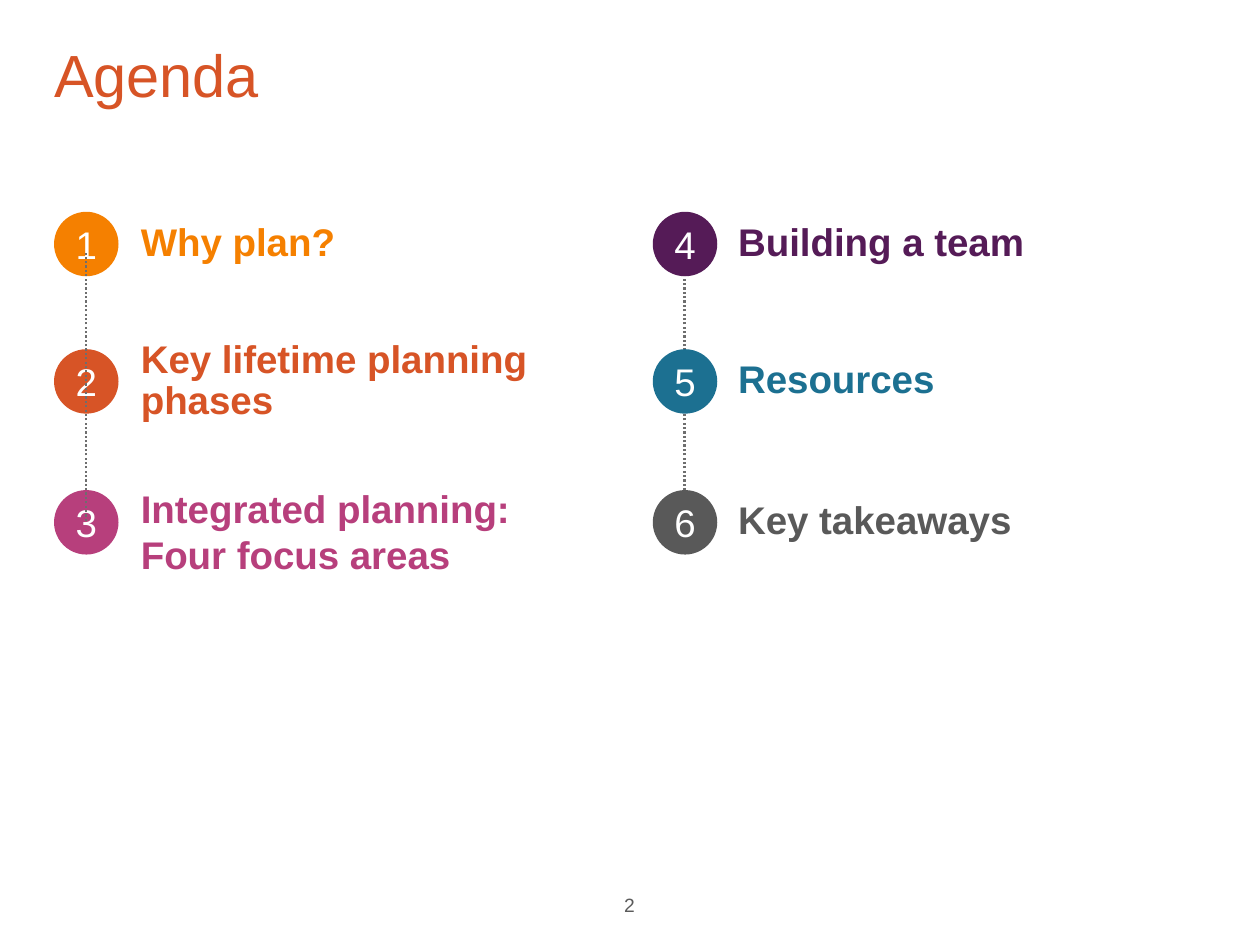
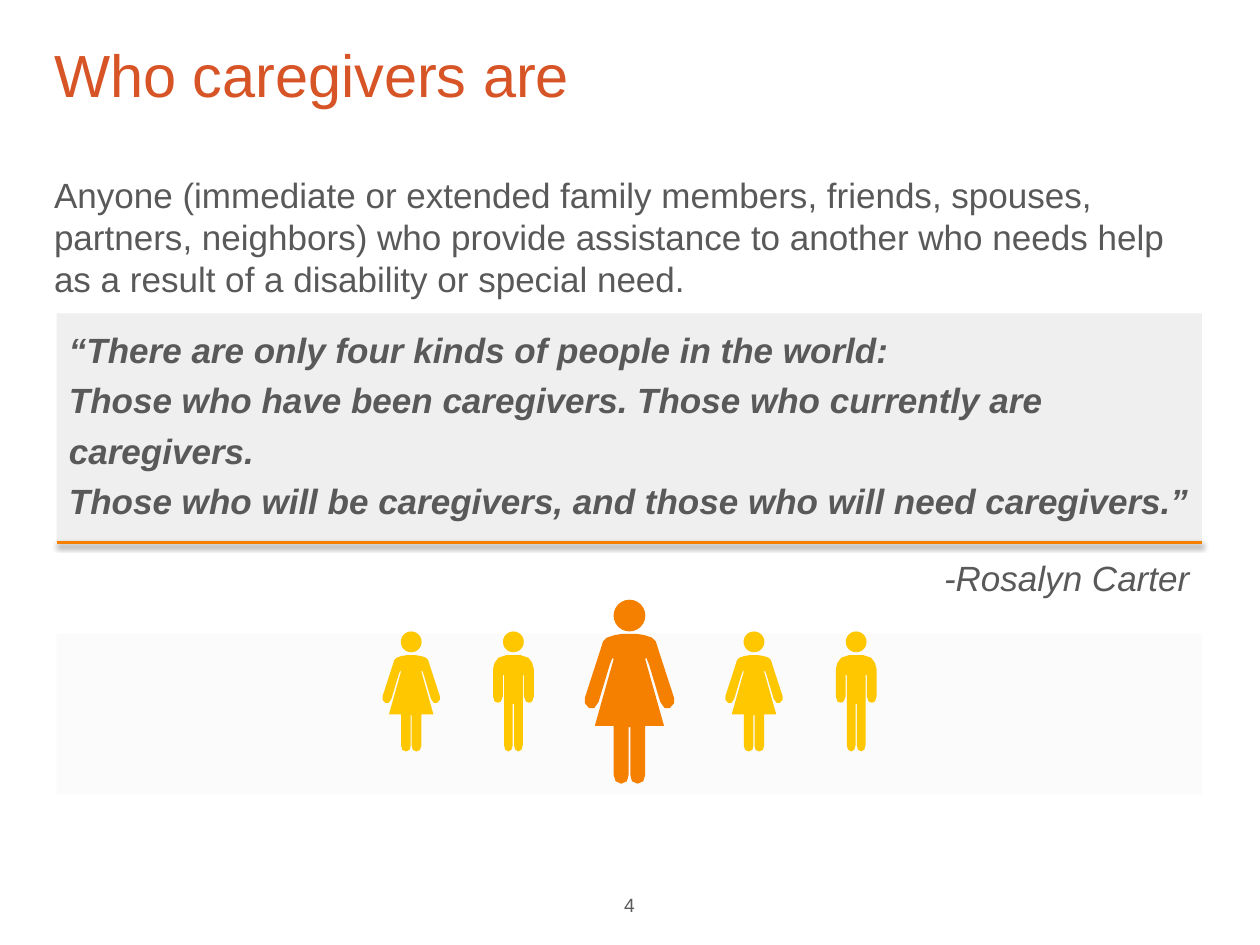
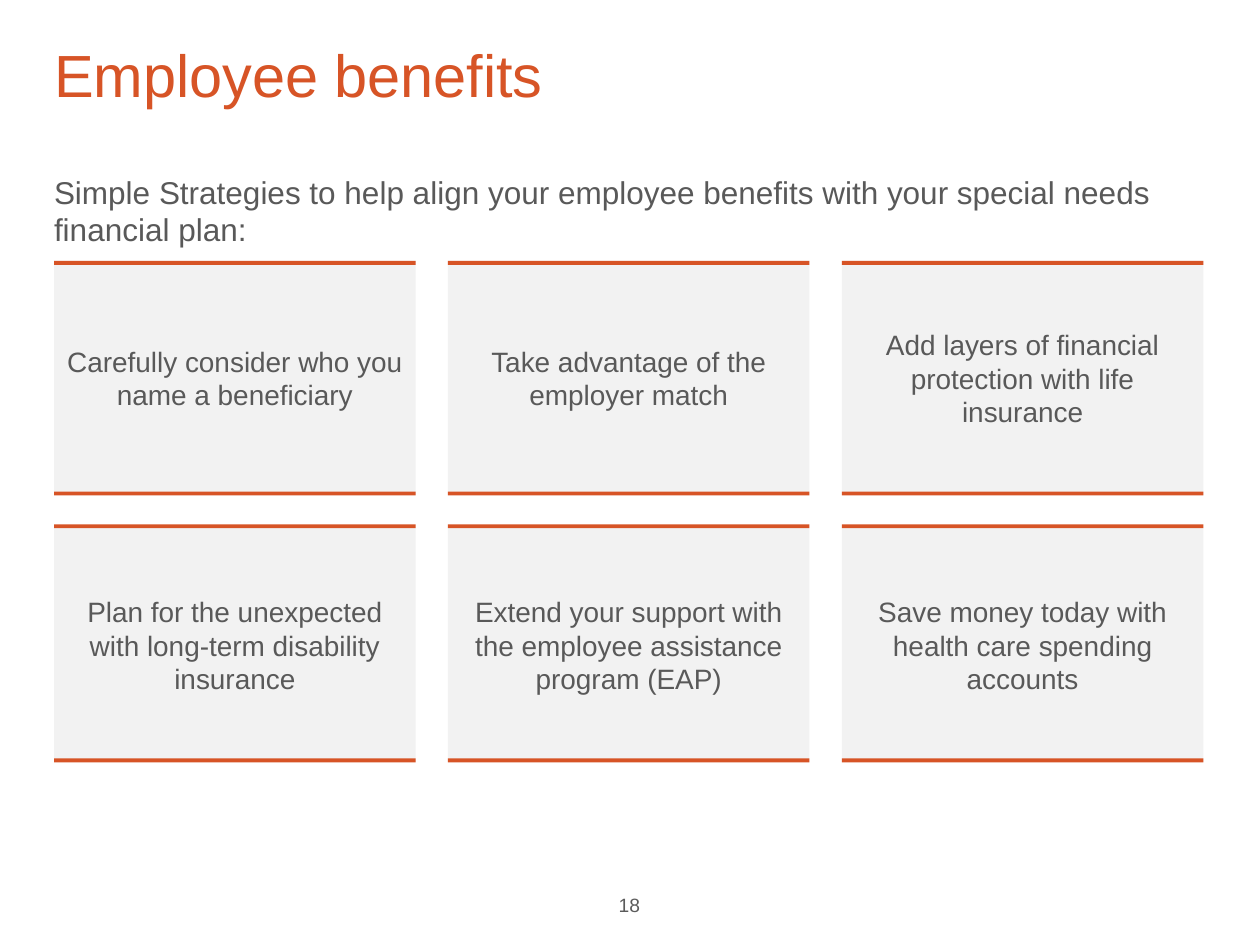
from dataclasses import dataclass
from typing import Optional

from lxml.etree import SubElement
from pptx import Presentation
from pptx.dml.color import RGBColor
from pptx.enum.dml import MSO_LINE
from pptx.enum.shapes import MSO_CONNECTOR, MSO_SHAPE
from pptx.enum.text import MSO_ANCHOR, MSO_AUTO_SIZE, PP_ALIGN
from pptx.oxml.ns import qn
from pptx.shapes.autoshape import Shape
from pptx.shapes.connector import Connector
from pptx.slide import Slide
from pptx.text.text import TextFrame
from pptx.util import Cm, Pt

FONT = "Arial"
RUST = "D75426"
ORANGE = "F58000"
YELLOW = "FFC700"
GRAY = "595959"
MID_GRAY = "6E6E6E"
LIGHT_GRAY = "F2F2F2"
WHITE = "FFFFFF"
LEFT = 1.09
CONTENT_WIDTH = 23.16

Points = list[tuple[float, float]]

WOMAN_HALF: Points = [
    (0, 0), (6, 0), (12, 1), (18, 3), (21, 6), (22.5, 11),
    (35.5, 51), (35.5, 55), (32, 59), (28, 59), (24.5, 54),
    (15.5, 24), (13.5, 19), (12.5, 20), (27.5, 73), (12.5, 73),
    (12.5, 112), (11, 117), (6.5, 119), (2, 117), (0.7, 112), (0.7, 74),
]
MAN_HALF: Points = [
    (0, 0), (6, 0), (12, 2), (15, 6), (16.3, 11), (16.3, 33),
    (15, 37), (12.5, 38), (10, 37), (8.5, 33), (8.5, 16), (7.5, 16),
    (7.5, 72), (6.5, 75.5), (4, 77), (1.5, 75.5), (0.5, 72), (0.5, 39),
]


@dataclass(frozen=True)
class AgendaItem:
    text: str
    color: str
    label_shift: float = 0


@dataclass(frozen=True)
class FigureSize:
    head_top: float
    head: float
    body_top: float
    body_height: float
    color: str


@dataclass(frozen=True)
class Person:
    center: float
    half_outline: Points
    size: FigureSize


@dataclass(frozen=True)
class CardRow:
    top: float
    bar_tops: tuple[float, float]
    texts: tuple[str, str, str]


LARGE = FigureSize(12.09, 0.64, 12.78, 3.02, ORANGE)
SMALL = FigureSize(12.73, 0.42, 13.21, 1.94, YELLOW)

AGENDA_TOPS = (4.27, 7.04, 9.88)
AGENDA_COLUMNS = (
    (1.09, 2.59, (
        AgendaItem("Why plan?", ORANGE),
        AgendaItem("Key lifetime planning phases", RUST),
        AgendaItem("Integrated planning:\vFour focus areas", "B73F7C", 0.17),
    )),
    (13.16, 14.63, (
        AgendaItem("Building a team", "551B57"),
        AgendaItem("Resources", "1C7091"),
        AgendaItem("Key takeaways", GRAY),
    )),
)

PEOPLE = (
    Person(8.29, WOMAN_HALF, SMALL),
    Person(10.35, MAN_HALF, SMALL),
    Person(12.69, WOMAN_HALF, LARGE),
    Person(15.2, WOMAN_HALF, SMALL),
    Person(17.26, MAN_HALF, SMALL),
)

CARD_ROWS = (
    CardRow(5.26, (5.26, 9.91), (
        "Carefully consider who you name a beneficiary",
        "Take advantage of the employer match",
        "Add layers of financial protection with life insurance",
    )),
    CardRow(10.64, (10.57, 15.29), (
        "Plan for the unexpected with long-term disability insurance",
        "Extend your support with the employee assistance program (EAP)",
        "Save money today with health care spending accounts",
    )),
)


def rgb(color: str) -> RGBColor:
    return RGBColor.from_string(color)


def write_text(
    frame: TextFrame,
    text: str,
    *,
    size: float,
    color: str = GRAY,
    bold: bool = False,
    italic: bool = False,
    align: PP_ALIGN = PP_ALIGN.LEFT,
    line_spacing: Optional[float] = None,
    space_before: Optional[float] = None,
    append: bool = False,
) -> None:
    paragraph = frame.add_paragraph() if append else frame.paragraphs[0]
    paragraph.text = text
    paragraph.alignment = align
    if line_spacing is not None:
        paragraph.line_spacing = line_spacing
    if space_before is not None:
        paragraph.space_before = Pt(space_before)
    for run in paragraph.runs:
        run.font.name = FONT
        run.font.size = Pt(size)
        run.font.bold = bold
        run.font.italic = italic
        run.font.color.rgb = rgb(color)


def set_frame(
    frame: TextFrame,
    margins: tuple[float, float, float, float] = (0.25, 0.13, 0.25, 0.13),
    anchor: MSO_ANCHOR = MSO_ANCHOR.TOP,
) -> TextFrame:
    frame.word_wrap = True
    frame.auto_size = MSO_AUTO_SIZE.NONE
    frame.vertical_anchor = anchor
    (frame.margin_left, frame.margin_top,
     frame.margin_right, frame.margin_bottom) = map(Cm, margins)
    return frame


def add_text_box(
    slide: Slide, left: float, top: float, width: float, height: float, **layout
) -> TextFrame:
    box = slide.shapes.add_textbox(Cm(left), Cm(top), Cm(width), Cm(height))
    return set_frame(box.text_frame, **layout)


def paint(shape: Shape, color: str, opacity: Optional[int] = None) -> None:
    shape.shadow.inherit = False
    shape.fill.solid()
    shape.fill.fore_color.rgb = rgb(color)
    shape.line.fill.background()
    if opacity is not None:
        fill_color = shape._element.spPr.find(qn("a:solidFill"))[0]
        SubElement(fill_color, qn("a:alpha"), val=str(opacity * 1000))


def add_block(
    slide: Slide,
    kind: MSO_SHAPE,
    left: float,
    top: float,
    width: float,
    height: float,
    color: str,
    opacity: Optional[int] = None,
) -> Shape:
    shape = slide.shapes.add_shape(kind, Cm(left), Cm(top), Cm(width), Cm(height))
    paint(shape, color, opacity)
    return shape


def add_line(
    slide: Slide,
    start: tuple[float, float],
    end: tuple[float, float],
    color: str,
    width: float,
) -> Connector:
    line = slide.shapes.add_connector(
        MSO_CONNECTOR.STRAIGHT, *map(Cm, start), *map(Cm, end)
    )
    line.line.color.rgb = rgb(color)
    line.line.width = Pt(width)
    SubElement(line._element.spPr, qn("a:effectLst"))
    return line


def add_drop_shadow(line: Connector) -> None:
    effects = line._element.spPr.find(qn("a:effectLst"))
    shadow = SubElement(
        effects, qn("a:outerShdw"),
        blurRad=str(Pt(3.1)), dist=str(Pt(1.6)), dir="5400000", rotWithShape="0",
    )
    color = SubElement(shadow, qn("a:srgbClr"), val="000000")
    SubElement(color, qn("a:alpha"), val="38000")


def add_titled_slide(presentation: Presentation, title: str, number: int) -> Slide:
    slide = presentation.slides.add_slide(presentation.slide_layouts[5])
    placeholder = slide.shapes.title
    placeholder.left, placeholder.top = Cm(LEFT), Cm(1.04)
    placeholder.width, placeholder.height = Cm(CONTENT_WIDTH), Cm(1.98)
    frame = set_frame(placeholder.text_frame, margins=(0, 0, 0.25, 0.13))
    write_text(frame, title, size=34, color=RUST, line_spacing=0.8)
    footer = add_text_box(slide, 11.89, 17.88, 1.6, 1.17)
    write_text(footer, str(number), size=11, color="5B5B5B", align=PP_ALIGN.CENTER)
    return slide


def add_agenda_line(slide: Slide, circle_left: float) -> None:
    x = circle_left + 0.64
    line = add_line(slide, (x, 10.5), (x, 5.1), MID_GRAY, 1.25)
    line.line.dash_style = MSO_LINE.ROUND_DOT


def add_agenda_item(
    slide: Slide,
    item: AgendaItem,
    number: int,
    circle_left: float,
    label_left: float,
    top: float,
) -> None:
    diameter = 1.3
    circle = add_block(
        slide, MSO_SHAPE.OVAL, circle_left, top, diameter, diameter, item.color
    )
    frame = set_frame(circle.text_frame, margins=(0, 0, 0, 0), anchor=MSO_ANCHOR.MIDDLE)
    write_text(frame, str(number), size=22, color=WHITE, align=PP_ALIGN.CENTER)
    label = add_text_box(
        slide, label_left, top + item.label_shift, 8.51, diameter,
        anchor=MSO_ANCHOR.MIDDLE,
    )
    spacing = 1.0 if "\v" in item.text else 0.9
    write_text(
        label, item.text, size=22, color=item.color, bold=True, line_spacing=spacing
    )


def build_agenda(presentation: Presentation) -> None:
    slide = add_titled_slide(presentation, "Agenda", 2)
    left_column, right_column = AGENDA_COLUMNS
    add_agenda_line(slide, right_column[0])
    number = 0
    for circle_left, label_left, items in AGENDA_COLUMNS:
        for item, top in zip(items, AGENDA_TOPS):
            number += 1
            add_agenda_item(slide, item, number, circle_left, label_left, top)
    add_agenda_line(slide, left_column[0])


def add_person(slide: Slide, person: Person) -> None:
    size = person.size
    half = person.half_outline
    outline = half + [(-x, y) for x, y in reversed(half[1:])]
    unit = size.body_height / max(y for _, y in half)
    points = [
        (Cm(person.center + x * unit), Cm(size.body_top + y * unit))
        for x, y in outline
    ]
    builder = slide.shapes.build_freeform(*points[0])
    builder.add_line_segments(points[1:], close=True)
    paint(builder.convert_to_shape(), size.color)
    add_block(
        slide, MSO_SHAPE.OVAL, person.center - size.head / 2, size.head_top,
        size.head, size.head, size.color,
    )


def build_caregivers(presentation: Presentation) -> None:
    slide = add_titled_slide(presentation, "Who caregivers are", 4)
    definition = add_text_box(
        slide, LEFT, 3.5, CONTENT_WIDTH, 2.7, margins=(0, 0, 0.25, 0.13)
    )
    write_text(
        definition,
        "Anyone (immediate or extended family members, friends, spouses, partners, "
        "neighbors) who provide assistance to another who needs help as a result of "
        "a disability or special need.",
        size=20,
    )
    band_left, band_width, quote_top, quote_height = 1.14, 23.09, 6.32, 4.62
    add_block(
        slide, MSO_SHAPE.RECTANGLE, band_left, quote_top, band_width, quote_height,
        MID_GRAY, opacity=11,
    )
    quote = add_text_box(slide, band_left, quote_top, band_width, 5.89)
    write_text(
        quote,
        "“There are only four kinds of people in the world:\v"
        "Those who have been caregivers. Those who currently are caregivers.\v"
        "Those who will be caregivers, and those who will need caregivers.”",
        size=20, bold=True, italic=True, line_spacing=1.2,
    )
    write_text(
        quote, "-Rosalyn Carter", size=20, italic=True, align=PP_ALIGN.RIGHT,
        line_spacing=1.2, space_before=15, append=True,
    )
    line_top = quote_top + quote_height
    underline = add_line(
        slide, (band_left, line_top), (band_left + band_width, line_top), ORANGE, 2
    )
    add_drop_shadow(underline)
    add_block(
        slide, MSO_SHAPE.RECTANGLE, band_left, 12.78, band_width, 3.23,
        LIGHT_GRAY, opacity=30,
    )
    for person in PEOPLE:
        add_person(slide, person)


def build_benefits(presentation: Presentation) -> None:
    slide = add_titled_slide(presentation, "Employee benefits", 18)
    intro = add_text_box(slide, LEFT, 3.48, CONTENT_WIDTH, 1.8, margins=(0, 0, 0, 0))
    write_text(
        intro,
        "Simple Strategies to help align your employee benefits with your special "
        "needs financial plan:",
        size=18,
    )
    card_width, column_step = 7.29, 7.94
    for row in CARD_ROWS:
        for column, text in enumerate(row.texts):
            left = LEFT + column * column_step
            card = add_block(
                slide, MSO_SHAPE.RECTANGLE, left, row.top, card_width, 4.72, LIGHT_GRAY
            )
            frame = set_frame(
                card.text_frame, margins=(0.25, 0.25, 0.25, 0.25),
                anchor=MSO_ANCHOR.MIDDLE,
            )
            write_text(frame, text, size=16, align=PP_ALIGN.CENTER)
            for bar_top in row.bar_tops:
                add_block(
                    slide, MSO_SHAPE.RECTANGLE, left, bar_top, card_width, 0.08, RUST
                )


def main() -> None:
    presentation = Presentation()
    presentation.slide_width = Cm(25.4)
    presentation.slide_height = Cm(19.05)
    build_agenda(presentation)
    build_caregivers(presentation)
    build_benefits(presentation)
    presentation.save("out.pptx")


if __name__ == "__main__":
    main()
